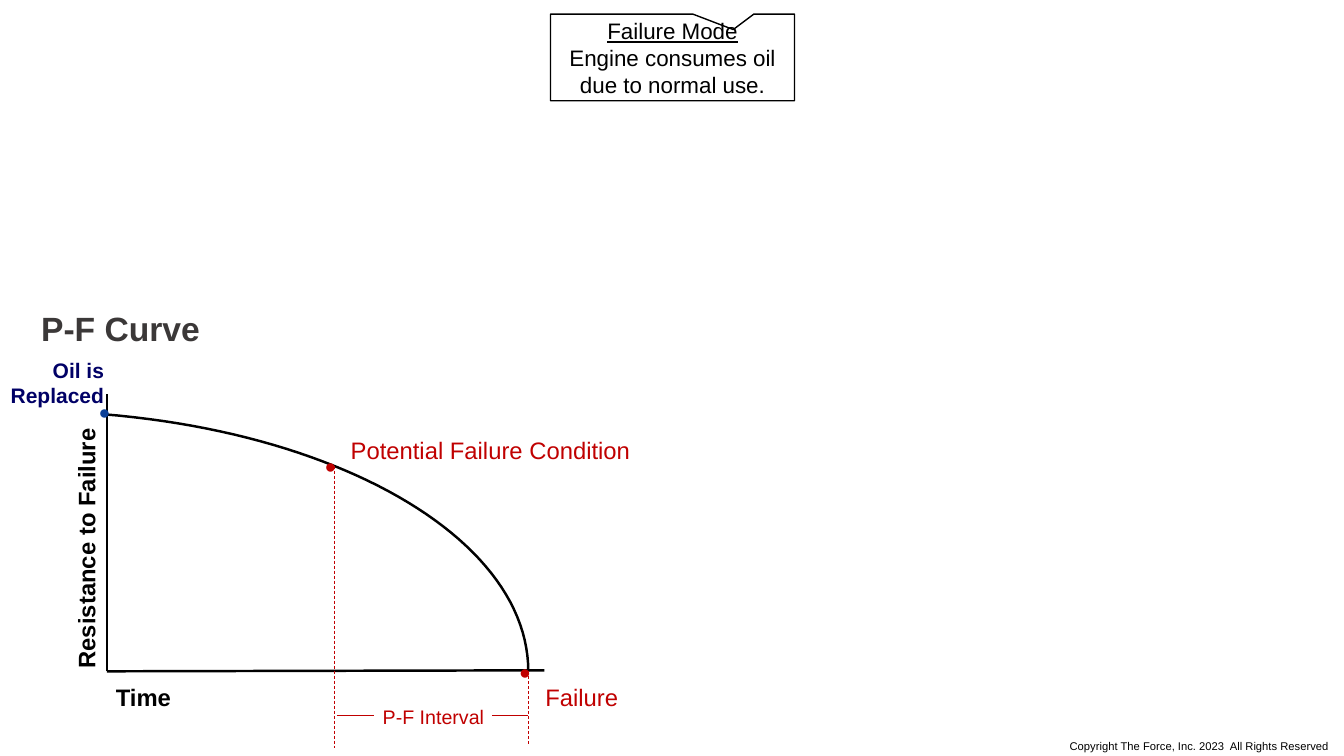
"""Draw a P-F curve for engine oil with its failure mode callout."""
from lxml import etree
from pptx import Presentation
from pptx import util as u
from pptx.dml.color import RGBColor
from pptx.enum import dml, shapes, text
from pptx.oxml.ns import qn

COLUMNS, ROWS = 1333, 750
BLACK, RED, NAVY, BLUE, GRAY, WHITE = "000000", "C00000", "000066", "0B4097", "3B3838", "FFFFFF"
LEFT, CENTER, RIGHT = text.PP_ALIGN.LEFT, text.PP_ALIGN.CENTER, text.PP_ALIGN.RIGHT

ORIGIN, FAILURE = (106, 666), (524, 666)
POTENTIAL_X, INTERVAL_Y = 332, 710
CURVE = [(103, 411), (346, 431), (524, 539), FAILURE]
CURVE_STEPS = 48

AXES = [(ORIGIN[0], 391, *ORIGIN), (*ORIGIN, 540, 665)]
DROPS = [(POTENTIAL_X, 462, POTENTIAL_X, 742), (*FAILURE, FAILURE[0], 740)]
INTERVAL = [(334, INTERVAL_Y, 371, INTERVAL_Y), (488, INTERVAL_Y, FAILURE[0], INTERVAL_Y)]
LINES = [(AXES, BLACK, 1.75, False), (DROPS, RED, 0.5, True), (INTERVAL, RED, 0.5, False)]

LABELS = [
    ("Resistance to Failure", (-61, 507, 293, 39), 17, BLACK, True, LEFT, 270),
    ("Time", (105, 672, 85, 39), 17, BLACK, True, LEFT, 0),
    ("Failure", (531, 672, 418, 39), 17, RED, False, LEFT, 0),
    ("●", (505, 650, 50, 69), 14, RED, True, LEFT, 0),
    ("●", (88, 392, 50, 33), 14, BLUE, True, LEFT, 0),
    ("●", (312, 445, 35, 33), 14, RED, True, LEFT, 0),
    ("Potential Failure Condition", (338, 427, 434, 39), 17, RED, False, LEFT, 0),
    ("Oil is Replaced", (-12, 350, 125, 61), 15, NAVY, True, RIGHT, 0),
    ("P-F Interval", (360, 694, 140, 34), 14, RED, False, CENTER, 0),
    ("P-F Curve", (15, 301, 209, 50), 24, GRAY, True, CENTER, 0),
    ("Copyright The Force, Inc. 2023  All Rights Reserved",
     (1051, 729, 282, 24), 8, BLACK, False, LEFT, 0),
]
CALLOUT_BOX, CALLOUT_TIP = (546, 14, 242, 86), (0.249, -0.321)
CALLOUT = [("Failure Mode", True), ("Engine consumes oil due to normal use.", False)]

presentation = Presentation()
presentation.slide_width, presentation.slide_height = u.Inches(13.33), u.Inches(7.5)
slide = presentation.slides.add_slide(presentation.slide_layouts[6])
CELL_WIDTH = presentation.slide_width / COLUMNS
CELL_HEIGHT = presentation.slide_height / ROWS


def place(*cells):
    """Turn alternating column and row numbers into slide lengths."""
    return [round(cell * (CELL_HEIGHT if index % 2 else CELL_WIDTH))
            for index, cell in enumerate(cells)]


def color(value):
    """Return the colour for a hex string."""
    return RGBColor.from_string(value)


def style_line(line, value, width):
    """Set the colour and width of a line."""
    line.color.rgb = color(value)
    line.width = u.Pt(width)


def add_line(ends, value, width, dashed):
    """Add a straight line without a shadow."""
    connector = slide.shapes.add_connector(shapes.MSO_CONNECTOR.STRAIGHT, *place(*ends))
    style_line(connector.line, value, width)
    if dashed:
        connector.line.dash_style = dml.MSO_LINE.DASH
    etree.SubElement(connector._element.spPr, qn("a:effectLst"))


def write(paragraph, words, size, value, bold=False, align=LEFT, underline=False):
    """Write one styled run into a paragraph."""
    paragraph.alignment = align
    run = paragraph.add_run()
    run.text = words
    font = run.font
    font.name, font.size, font.bold = "Arial", u.Pt(size), bold
    font.underline = underline
    font.color.rgb = color(value)


def add_label(words, box, size, value, bold, align, rotation):
    """Add a wrapped text box holding one paragraph."""
    shape = slide.shapes.add_textbox(*place(*box))
    shape.rotation = rotation
    shape.text_frame.word_wrap = True
    shape.text_frame.auto_size = text.MSO_AUTO_SIZE.SHAPE_TO_FIT_TEXT
    write(shape.text_frame.paragraphs[0], words, size, value, bold, align)


def curve_point(step):
    """Return a point of the cubic curve in slide lengths."""
    t = step / CURVE_STEPS
    weights = [(1 - t) ** 3, 3 * t * (1 - t) ** 2, 3 * t ** 2 * (1 - t), t ** 3]
    return place(*(sum(weight * value for weight, value in zip(weights, axis))
                   for axis in zip(*CURVE)))


def add_curve():
    """Add the open failure curve."""
    points = [curve_point(step) for step in range(CURVE_STEPS + 1)]
    builder = slide.shapes.build_freeform(*points[0])
    builder.add_line_segments(points[1:], close=False)
    shape = builder.convert_to_shape()
    shape.shadow.inherit = False
    shape.fill.background()
    style_line(shape.line, BLACK, 1.75)


def add_callout():
    """Add the callout that names the failure mode."""
    shape = slide.shapes.add_shape(shapes.MSO_SHAPE.RECTANGULAR_CALLOUT, *place(*CALLOUT_BOX))
    for index, value in enumerate(CALLOUT_TIP):
        shape.adjustments[index] = value
    shape.shadow.inherit = False
    shape.fill.solid()
    shape.fill.fore_color.rgb = color(WHITE)
    style_line(shape.line, BLACK, 1)
    frame = shape.text_frame
    frame.word_wrap = True
    frame.vertical_anchor = text.MSO_ANCHOR.MIDDLE
    for index, (words, underline) in enumerate(CALLOUT):
        paragraph = frame.add_paragraph() if index else frame.paragraphs[0]
        write(paragraph, words, 16, BLACK, align=CENTER, underline=underline)


def main():
    """Build the slide and save it."""
    add_curve()
    for group, value, width, dashed in LINES:
        for ends in group:
            add_line(ends, value, width, dashed)
    for label in LABELS:
        add_label(*label)
    add_callout()
    presentation.save("out.pptx")


if __name__ == "__main__":
    main()
